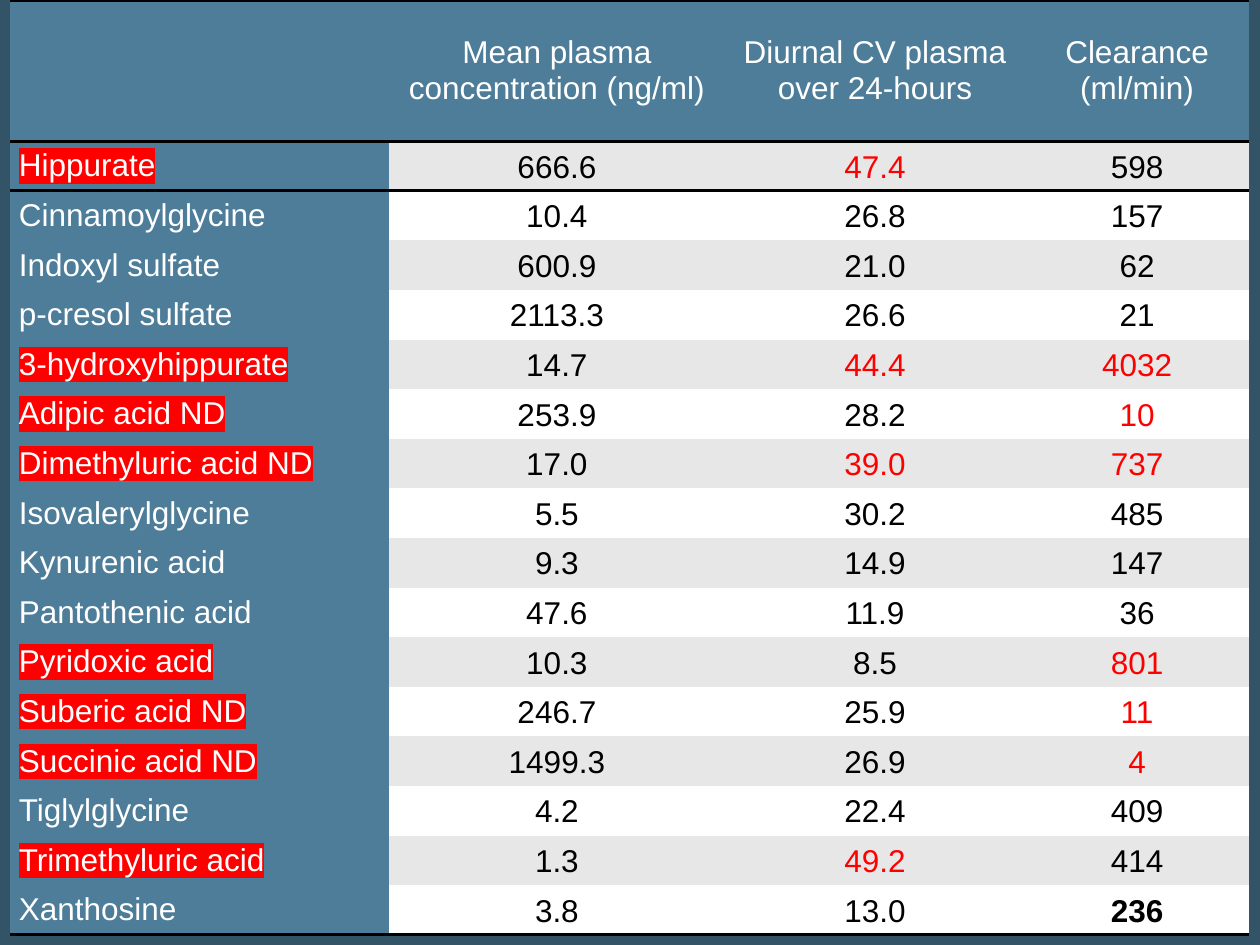
from dataclasses import dataclass

from lxml import etree
from pptx import Presentation
from pptx.dml.color import RGBColor
from pptx.enum.text import MSO_ANCHOR, PP_ALIGN
from pptx.oxml.ns import qn
from pptx.table import Table, _Cell
from pptx.util import Inches, Pt

MIDDLE = MSO_ANCHOR.MIDDLE
LEFT, CENTER = PP_ALIGN.LEFT, PP_ALIGN.CENTER
NAVY, BLUE, GREY = "335366", "4D7D99", "E7E7E7"
WHITE, BLACK, RED = "FFFFFF", "000000", "FF0000"
PLAIN = "{2D5ABB26-0587-4C30-8999-92F81FD0307C}"
WIDTHS = (3.01, 2.66, 2.39, 1.77)
TOTAL, HEAD = 7.42, 1.12
TITLES = ("", "Mean plasma concentration (ng/ml)",
          "Diurnal CV plasma over 24-hours", "Clearance (ml/min)")


@dataclass
class Solute:
    name: str
    values: tuple[str, str, str]
    marked: bool = False
    reds: tuple[int, ...] = ()


SOLUTES = (
    Solute("Hippurate", ("666.6", "47.4", "598"), True, (2,)),
    Solute("Cinnamoylglycine", ("10.4", "26.8", "157")),
    Solute("Indoxyl sulfate", ("600.9", "21.0", "62")),
    Solute("p-cresol sulfate", ("2113.3", "26.6", "21")),
    Solute("3-hydroxyhippurate", ("14.7", "44.4", "4032"), True, (2, 3)),
    Solute("Adipic acid ND", ("253.9", "28.2", "10"), True, (3,)),
    Solute("Dimethyluric acid ND", ("17.0", "39.0", "737"), True, (2, 3)),
    Solute("Isovalerylglycine", ("5.5", "30.2", "485")),
    Solute("Kynurenic acid", ("9.3", "14.9", "147")),
    Solute("Pantothenic acid", ("47.6", "11.9", "36")),
    Solute("Pyridoxic acid", ("10.3", "8.5", "801"), True, (3,)),
    Solute("Suberic acid ND", ("246.7", "25.9", "11"), True, (3,)),
    Solute("Succinic acid ND", ("1499.3", "26.9", "4"), True, (3,)),
    Solute("Tiglylglycine", ("4.2", "22.4", "409")),
    Solute("Trimethyluric acid", ("1.3", "49.2", "414"), True, (2,)),
    Solute("Xanthosine", ("3.8", "13.0", "236")),
)


def paint(target, color: str) -> None:
    target.solid()
    target.fore_color.rgb = RGBColor.from_string(color)


def rule(cell: _Cell, side: str) -> None:
    props = cell._tc.get_or_add_tcPr()
    line = etree.SubElement(props, qn(f"a:ln{side}"), w=str(Pt(2)))
    fill = etree.SubElement(line, qn("a:solidFill"))
    etree.SubElement(fill, qn("a:srgbClr"), val=BLACK)


def mark(cell: _Cell) -> None:
    props = cell.text_frame.paragraphs[0].runs[0]._r.get_or_add_rPr()
    light = etree.SubElement(props, qn("a:highlight"))
    etree.SubElement(light, qn("a:srgbClr"), val=RED)


def write(cell: _Cell, text: str, fill: str, color: str, align: PP_ALIGN,
          inset: float = 0.07, space: float | None = None,
          bold: bool = False) -> None:
    paint(cell.fill, fill)
    cell.vertical_anchor = MIDDLE
    cell.margin_left = cell.margin_right = Inches(inset)
    cell.margin_top = cell.margin_bottom = Inches(0)
    cell.text = text
    para = cell.text_frame.paragraphs[0]
    para.alignment = align
    para.line_spacing = space
    para.font.name = "Arial"
    para.font.size = Pt(18)
    para.font.bold = bold
    paint(para.font.fill, color)


def add_row(table: Table, row: int, solute: Solute) -> None:
    name = table.cell(row, 0)
    write(name, solute.name, BLUE, WHITE, LEFT)
    if solute.marked:
        mark(name)
    band = GREY if row % 2 else WHITE
    inset = 0.07 if row == 1 else 0
    for col, value in enumerate(solute.values, 1):
        color = RED if col in solute.reds else BLACK
        write(table.cell(row, col), value, band, color, CENTER, inset, 1.07,
              value == "236")


def main() -> None:
    deck = Presentation()
    deck.slide_width, deck.slide_height = Inches(10), Inches(7.5)
    slide = deck.slides.add_slide(deck.slide_layouts[6])
    paint(slide.background.fill, NAVY)

    count = len(SOLUTES)
    frame = slide.shapes.add_table(count + 1, len(WIDTHS), Inches(0.08),
                                   Inches(0), Inches(sum(WIDTHS)),
                                   Inches(TOTAL))
    table = frame.table
    table.first_row = table.horz_banding = False
    table._tbl.tblPr.find(qn("a:tableStyleId")).text = PLAIN
    for col, width in enumerate(WIDTHS):
        table.columns[col].width = Inches(width)
    for row in table.rows:
        row.height = Inches((TOTAL - HEAD) / count)
    table.rows[0].height = Inches(HEAD)

    for col, title in enumerate(TITLES):
        cell = table.cell(0, col)
        rule(cell, "T")
        rule(cell, "B")
        rule(table.cell(1, col), "T")
        rule(table.cell(count, col), "B")
        write(cell, title, BLUE, WHITE, CENTER)
    for row, solute in enumerate(SOLUTES, 1):
        add_row(table, row, solute)
    deck.save("out.pptx")


if __name__ == "__main__":
    main()
